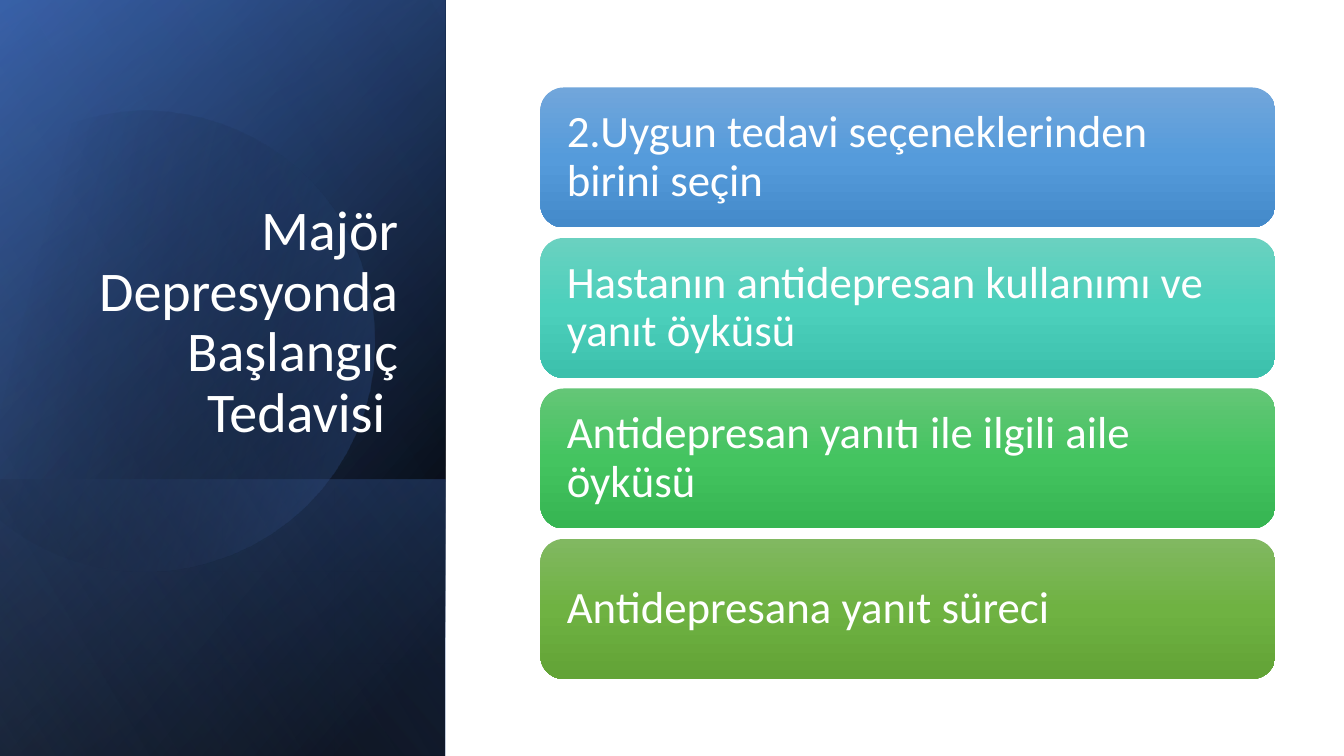
from math import cos, radians, sin

from pptx import Presentation
from pptx.dml.color import RGBColor
from pptx.enum.shapes import MSO_SHAPE
from pptx.enum.text import MSO_ANCHOR, MSO_AUTO_SIZE, PP_ALIGN
from pptx.oxml import parse_xml
from pptx.oxml.ns import nsdecls, qn
from pptx.util import Pt

RECT, ROUNDED = MSO_SHAPE.RECTANGLE, MSO_SHAPE.ROUNDED_RECTANGLE
BOTTOM, MIDDLE = MSO_ANCHOR.BOTTOM, MSO_ANCHOR.MIDDLE
LEFT, RIGHT = PP_ALIGN.LEFT, PP_ALIGN.RIGHT
NO_FIT = MSO_AUTO_SIZE.NONE

THEME = {
    "font": "Calibri", "title_size": 40, "card_size": 32, "text": "FFFFFF",
    "black": "000000", "navy": "2F5597", "blue": "4472C4", "pale": "8FAADC",
    "cards": [("71A6DB", "559BDB", "448ACA"), ("6AD1C0", "4CD0BC", "3CC0AC"),
              ("64C677", "44C460", "36B552"), ("81B861", "6FB242", "62A336")],
}


def paint(sp, stops, angle):
    """Fill with a linear gradient of (position, colour, opacity) stops."""
    sp.shadow.inherit = False
    sp.line.fill.background()
    sp.fill.background()
    marks = "".join(
        f'<a:gs pos="{pos * 1000}"><a:srgbClr val="{color}">'
        f'<a:alpha val="{opacity * 1000}"/></a:srgbClr></a:gs>'
        for pos, color, opacity in stops)
    grad = parse_xml(
        f'<a:gradFill {nsdecls("a")} rotWithShape="1"><a:gsLst>{marks}</a:gsLst>'
        f'<a:lin ang="{angle * 60000}" scaled="0"/></a:gradFill>')
    spPr = sp.element.spPr
    spPr.replace(spPr.find(qn("a:noFill")), grad)


def write(tf, text, size, align, anchor):
    tf.word_wrap = True
    tf.auto_size = NO_FIT
    tf.vertical_anchor = anchor
    p = tf.paragraphs[0]
    p.alignment = align
    p.line_spacing = 0.9
    r = p.add_run()
    r.text = text
    r.font.name = THEME["font"]
    r.font.size = Pt(size)
    r.font.color.rgb = RGBColor.from_string(THEME["text"])


prs = Presentation()
prs.slide_width, prs.slide_height = Pt(960), Pt(540)
s = prs.slides.add_slide(prs.slide_layouts[5])
black, navy, blue, pale = (THEME[k] for k in ("black", "navy", "blue", "pale"))

# Side panel: stacked gradient layers (top, height, stops, angle), turned a quarter
PANEL_W = 318
layers = [
    (0, 540, [(8, black, 100), (100, navy, 100)], 50),
    (0, 540, [(0, black, 0), (99, blue, 46)], 30),
    (342.7, 197.3, [(2, blue, 29), (100, black, 30)], 130),
    (0, 540, [(0, black, 0), (99, pale, 11)], 120),
]
panels = []
for top, height, stops, angle in layers:
    shift = (PANEL_W - height) / 2
    sp = s.shapes.add_shape(RECT, Pt(shift), Pt(top - shift), Pt(height), Pt(PANEL_W))
    sp.rotation = 90
    sp.element.spPr.xfrm.set("flipH", "1")
    paint(sp, stops, angle)
    panels.append(sp)

# Tilted disc cut off at the left edge: three-point entries are curves
outline = [
    [(177, 81), (241, 127), (261, 198)],
    [(287, 286), (236, 377), (149, 402)],
    [(94, 418), (38, 404), (-2, 370)],
    [(-11, 362)], [(-11, 126)], [(0, 116)],
    [(17, 102), (36, 92), (58, 86)],
    [(74, 81), (91, 79), (107, 79)],
]
STEPS = 16
points = [(107, 79)]
for segment in outline:
    if len(segment) == 1:
        points += segment
        continue
    curve = [points[-1]] + segment
    for i in range(1, STEPS + 1):
        t = i / STEPS
        weights = ((1 - t) ** 3, 3 * t * (1 - t) ** 2, 3 * t * t * (1 - t), t ** 3)
        points.append(tuple(sum(w * pt[k] for w, pt in zip(weights, curve))
                            for k in (0, 1)))

# Untilt the outline about its centre, then let the shape's rotation tilt it
TILT = 343.9
cx, cy = 114, 241
co, si = cos(radians(-TILT)), sin(radians(-TILT))
flat = [(Pt(cx + (x - cx) * co - (y - cy) * si),
         Pt(cy + (x - cx) * si + (y - cy) * co)) for x, y in points]
builder = s.shapes.build_freeform(*flat[0])
builder.add_line_segments(flat[1:])
disc = builder.convert_to_shape()
disc.rotation = TILT
paint(disc, [(29, black, 0), (100, blue, 43)], 30)
disc.element.addnext(panels[-1].element)

# Title, brought in front of the panel
title = s.shapes.title
title.left, title.top, title.width, title.height = Pt(46), Pt(132.5), Pt(245.5), Pt(188.6)
write(title.text_frame, "Majör Depresyonda Başlangıç Tedavisi ",
      THEME["title_size"], RIGHT, BOTTOM)
panels[-1].element.addnext(title.element)

# Cards
texts = [
    "2.Uygun tedavi seçeneklerinden birini seçin",
    "Hastanın antidepresan kullanımı ve yanıt öyküsü",
    "Antidepresan yanıtı ile ilgili aile öyküsü",
    "Antidepresana yanıt süreci",
]
for i, (text, colors) in enumerate(zip(texts, THEME["cards"])):
    card = s.shapes.add_shape(ROUNDED, Pt(386), Pt(62.5 + 107.5 * i), Pt(525), Pt(100))
    paint(card, [(pos, c, 100) for pos, c in zip((0, 50, 100), colors)], 90)
    tf = card.text_frame
    tf.margin_left = tf.margin_right = Pt(14)
    write(tf, text, THEME["card_size"], LEFT, MIDDLE)

prs.save("out.pptx")
